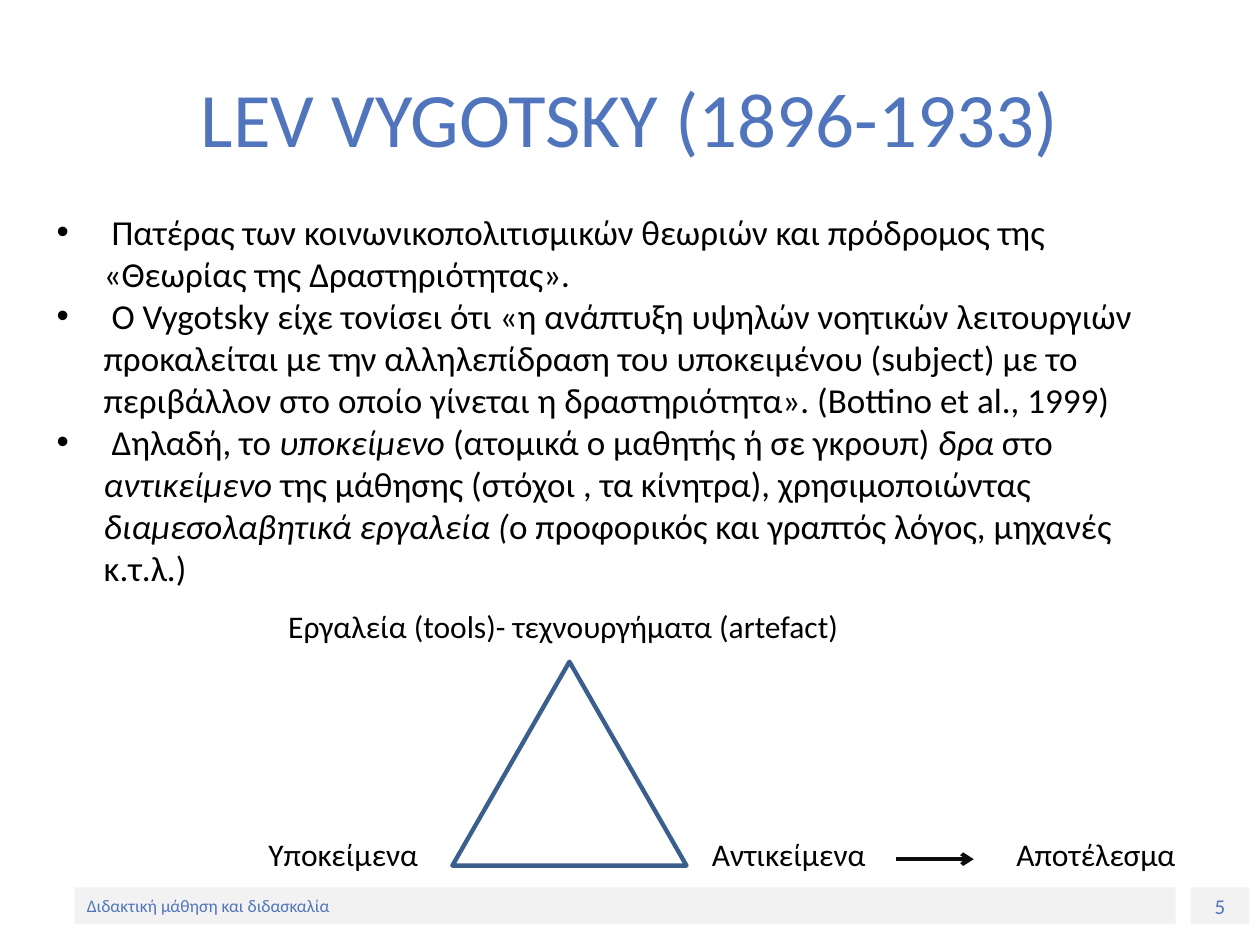
from dataclasses import dataclass

from lxml.etree import SubElement
from pptx import Presentation
from pptx.dml.color import RGBColor as Rgb
from pptx.enum.shapes import MSO_CONNECTOR as Connector, MSO_SHAPE as Shape
from pptx.enum.text import MSO_ANCHOR as Anchor, PP_ALIGN as Align
from pptx.oxml.ns import qn
from pptx.util import Cm, Pt


@dataclass(frozen=True)
class Theme:
    """Colours, font and type sizes of the slide."""
    font: str = "Calibri"
    accent: Rgb = Rgb(0x50, 0x75, 0xBC)
    ink: Rgb = Rgb(0, 0, 0)
    band: Rgb = Rgb(0xF2, 0xF2, 0xF2)
    outline: Rgb = Rgb(0x3A, 0x5F, 0x8C)
    arrow: Rgb = Rgb(0x0D, 0x0D, 0x0D)
    title: int = 44
    body: int = 20
    label: int = 18
    number: int = 12
    footer: int = 10


THEME = Theme()

POINTS = [
    [(" Πατέρας των κοινωνικοπολιτισμικών θεωριών και πρόδρομος της "
      "«Θεωρίας της Δραστηριότητας».", False)],
    [(" Ο Vygotsky είχε τονίσει ότι «η ανάπτυξη υψηλών νοητικών λειτουργιών "
      "προκαλείται με την αλληλεπίδραση του υποκειμένου (subject) με το "
      "περιβάλλον στο οποίο γίνεται η δραστηριότητα». (Bottino et al., 1999)", False)],
    [(" Δηλαδή, το ", False), ("υποκείμενο", True),
     (" (ατομικά ο μαθητής ή σε γκρουπ) ", False), ("δρα ", True),
     ("στο ", False), ("αντικείμενο ", True),
     ("της μάθησης (στόχοι , τα κίνητρα), χρησιμοποιώντας ", False),
     ("διαμεσολαβητικά εργαλεία (", True),
     ("ο προφορικός και γραπτός λόγος, μηχανές κ.τ.λ.)", False)],
]


def write(frame, paragraphs, *, size, color=THEME.ink, align=Align.LEFT,
          anchor=Anchor.TOP, wrap=True, bullet_indent=None):
    """Fill a text frame with paragraphs, each a list of (text, italic) runs."""
    frame.word_wrap = wrap
    frame.vertical_anchor = anchor
    for index, runs in enumerate(paragraphs):
        paragraph = frame.add_paragraph() if index else frame.paragraphs[0]
        paragraph.alignment = align
        if bullet_indent:
            properties = paragraph._p.get_or_add_pPr()
            properties.set("marL", str(bullet_indent))
            properties.set("indent", str(-bullet_indent))
            SubElement(properties, qn("a:buFont")).set("typeface", "Arial")
            SubElement(properties, qn("a:buChar")).set("char", "•")
        for text, italic in runs:
            run = paragraph.add_run()
            run.text = text
            run.font.name = THEME.font
            run.font.size = Pt(size)
            run.font.italic = italic
            run.font.color.rgb = color


def add_text(slide, box, paragraphs, **style):
    """Add a text box at a (left, top, width, height) box."""
    textbox = slide.shapes.add_textbox(*box)
    write(textbox.text_frame, paragraphs, **style)


def add_title(slide, box):
    """Place the heading centred in its box."""
    add_text(slide, box, [[("LEV VYGOTSKY (1896-1933)", False)]], size=THEME.title,
             color=THEME.accent, align=Align.CENTER, anchor=Anchor.MIDDLE)


def add_points(slide, box):
    """Place the bulleted points."""
    add_text(slide, box, POINTS, size=THEME.body, bullet_indent=Cm(0.95))


def add_activity_diagram(slide, box):
    """Place the mediation triangle, its corner labels and the outcome arrow."""
    left, top, _, height = box
    label_height = Cm(1.02)
    base_top = height - label_height
    labels = [
        ("Εργαλεία (tools)- τεχνουργήματα (artefact)", Cm(0.4), 0, Cm(11.96)),
        ("Υποκείμενα", 0, base_top, Cm(3.7)),
        ("Αντικείμενα", Cm(8.94), base_top, Cm(3.8)),
        ("Αποτέλεσμα", Cm(15.08), base_top, Cm(3.92)),
    ]
    for text, x, y, width in labels:
        add_text(slide, (left + x, top + y, width, label_height),
                 [[(text, False)]], size=THEME.label, wrap=False)

    triangle = slide.shapes.add_shape(Shape.ISOSCELES_TRIANGLE, left + Cm(3.96),
                                      top + Cm(1.22), Cm(4.72), Cm(4.11))
    triangle.shadow.inherit = False
    triangle.fill.background()
    triangle.line.color.rgb = THEME.outline
    triangle.line.width = Pt(2.5)

    arrow_y = top + Cm(5.2)
    arrow = slide.shapes.add_connector(Connector.STRAIGHT, left + Cm(12.9), arrow_y,
                                       left + Cm(14.47), arrow_y)
    arrow.line.color.rgb = THEME.arrow
    arrow.line.width = Pt(2.25)
    SubElement(arrow.line._get_or_add_ln(), qn("a:tailEnd")).set("type", "arrow")
    SubElement(arrow._element.spPr, qn("a:effectLst"))


def add_footer(slide, box):
    """Place the course name band and the page number beside it."""
    left, top, width, height = box
    number_width = Cm(1.19)
    name_width = width - number_width - Cm(0.3)
    cells = [
        ("Διδακτική μάθηση και διδασκαλία", left, name_width, THEME.footer, Align.LEFT),
        ("5", left + width - number_width, number_width, THEME.number, Align.CENTER),
    ]
    for text, x, cell_width, size, align in cells:
        band = slide.shapes.add_shape(Shape.RECTANGLE, x, top, cell_width, height)
        band.shadow.inherit = False
        band.fill.solid()
        band.fill.fore_color.rgb = THEME.band
        band.line.fill.background()
        write(band.text_frame, [[(text, False)]], size=size, color=THEME.accent,
              align=align, anchor=Anchor.MIDDLE)


def main():
    """Build the slide and save it."""
    deck = Presentation()
    deck.slide_width, deck.slide_height = Cm(25.4), Cm(19.05)
    slide = deck.slides.add_slide(deck.slide_layouts[6])
    add_footer(slide, (Cm(1.5), Cm(17.89), Cm(23.69), Cm(0.74)))
    add_points(slide, (Cm(0.89), Cm(4.11), Cm(23.24), Cm(7.95)))
    add_activity_diagram(slide, (Cm(5.16), Cm(12.12), Cm(19), Cm(5.61)))
    add_title(slide, (Cm(1.27), Cm(0.76), Cm(22.86), Cm(3.18)))
    deck.save("out.pptx")


if __name__ == "__main__":
    main()
